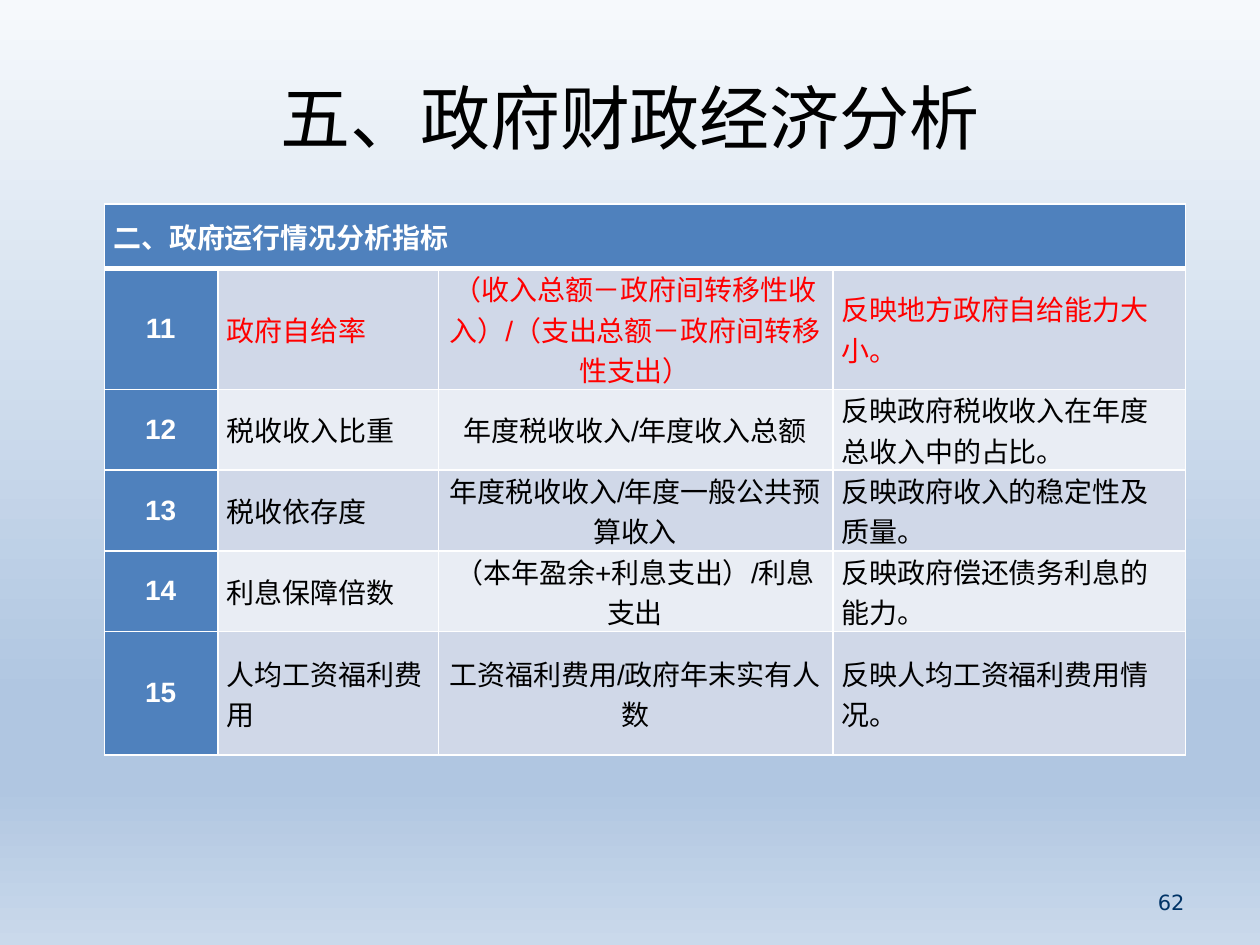
from lxml.etree import SubElement
from pptx import Presentation
from pptx.dml.color import RGBColor
from pptx.enum.text import MSO_ANCHOR, PP_ALIGN
from pptx.oxml import parse_xml
from pptx.oxml.ns import nsdecls, qn
from pptx.util import Inches, Pt

WIDTH, HEIGHT = 10, 7.5
COLORS = {
    "white": "FFFFFF", "black": "000000", "highlight": "FF0000",
    "header": "4F81BD", "odd_row": "D0D8E8", "even_row": "E9EDF4",
    "page_number": "003366",
}
BACKGROUND_STOPS = [(0, "F6F9FC"), (74, "B0C6E1"), (83, "B0C6E1"), (100, "CAD9EB")]
COLUMN_WIDTHS = [0.9, 1.75, 3.13, 2.8]
COLUMN_ALIGNMENTS = [PP_ALIGN.CENTER, PP_ALIGN.LEFT, PP_ALIGN.CENTER, PP_ALIGN.LEFT]
ROW_HEIGHTS = [0.51, 0.81, 0.54, 0.56, 0.54, 0.98]
TABLE_HEADING = "二、政府运行情况分析指标"
FIRST_NUMBER = 11
INDICATORS = [
    ("政府自给率", "（收入总额－政府间转移性收入）/（支出总额－政府间转移性支出）", "反映地方政府自给能力大小。"),
    ("税收收入比重", "年度税收收入/年度收入总额", "反映政府税收收入在年度总收入中的占比。"),
    ("税收依存度", "年度税收收入/年度一般公共预算收入", "反映政府收入的稳定性及质量。"),
    ("利息保障倍数", "（本年盈余+利息支出）/利息支出", "反映政府偿还债务利息的能力。"),
    ("人均工资福利费用", "工资福利费用/政府年末实有人数", "反映人均工资福利费用情况。"),
]


def rgb(name):
    return RGBColor.from_string(COLORS[name])


def set_background(slide):
    fill = slide.background.fill
    fill.gradient()
    fill.gradient_angle = 270
    stops = next(slide.element.iter(qn("a:gsLst")))
    for stop in list(stops):
        stops.remove(stop)
    for percent, color in BACKGROUND_STOPS:
        stop = SubElement(stops, qn("a:gs"), pos=str(percent * 1000))
        SubElement(stop, qn("a:srgbClr"), val=color)


def style_paragraph(paragraph, font_name, size, color, alignment, bold=False):
    paragraph.alignment = alignment
    paragraph.font.name = font_name
    paragraph.font.size = Pt(size)
    paragraph.font.bold = bold
    paragraph.font.color.rgb = rgb(color)


def add_text(slide, text, left, top, width, height, **style):
    shape = slide.shapes.add_textbox(
        Inches(left * WIDTH), Inches(top * HEIGHT),
        Inches(width * WIDTH), Inches(height * HEIGHT))
    frame = shape.text_frame
    frame.word_wrap = True
    frame.vertical_anchor = MSO_ANCHOR.MIDDLE
    frame.text = text
    style_paragraph(frame.paragraphs[0], **style)


def set_borders(cell, bottom_width):
    properties = cell._tc.get_or_add_tcPr()
    widths = {"lnL": 1, "lnR": 1, "lnT": 1, "lnB": bottom_width}
    for position, (tag, width) in enumerate(widths.items()):
        properties.insert(position, parse_xml(
            f'<a:{tag} {nsdecls("a")} w="{Pt(width)}"><a:solidFill>'
            f'<a:srgbClr val="{COLORS["white"]}"/></a:solidFill></a:{tag}>'))


def style_cell(cell, fill, bottom_width=1):
    cell.fill.solid()
    cell.fill.fore_color.rgb = rgb(fill)
    cell.vertical_anchor = MSO_ANCHOR.MIDDLE
    cell.margin_left = Inches(0.07)
    cell.margin_right = Inches(0.08)
    cell.margin_top = cell.margin_bottom = 0
    set_borders(cell, bottom_width)


def fill_cell(cell, text, color, alignment, bold=False):
    cell.text = text
    style_paragraph(cell.text_frame.paragraphs[0], "Arial", 16, color, alignment, bold)


def add_indicator_table(slide):
    table = slide.shapes.add_table(
        len(ROW_HEIGHTS), len(COLUMN_WIDTHS), Inches(0.83), Inches(1.62),
        Inches(sum(COLUMN_WIDTHS)), Inches(sum(ROW_HEIGHTS))).table
    for column, width in zip(table.columns, COLUMN_WIDTHS):
        column.width = Inches(width)
    for row, height in zip(table.rows, ROW_HEIGHTS):
        row.height = Inches(height)

    for cell in table.rows[0].cells:
        style_cell(cell, "header", bottom_width=3)
    heading = table.cell(0, 0)
    heading.merge(table.cell(0, len(COLUMN_WIDTHS) - 1))
    fill_cell(heading, TABLE_HEADING, "white", PP_ALIGN.LEFT, bold=True)

    for row_index, indicator in enumerate(INDICATORS, start=1):
        band = "odd_row" if row_index % 2 else "even_row"
        text_color = "highlight" if row_index == 1 else "black"
        values = (str(FIRST_NUMBER + row_index - 1), *indicator)
        for column_index, value in enumerate(values):
            cell = table.cell(row_index, column_index)
            is_number = column_index == 0
            style_cell(cell, "header" if is_number else band)
            fill_cell(cell, value, "white" if is_number else text_color,
                      COLUMN_ALIGNMENTS[column_index], is_number)


def main():
    presentation = Presentation()
    presentation.slide_width = Inches(WIDTH)
    presentation.slide_height = Inches(HEIGHT)
    slide = presentation.slides.add_slide(presentation.slide_layouts[6])
    set_background(slide)
    add_indicator_table(slide)
    add_text(slide, "五、政府财政经济分析", 0.05, 0.04, 0.9, 1 / 6,
             font_name="Calibri", size=40, color="black", alignment=PP_ALIGN.CENTER)
    add_text(slide, "62", 0.72, 0.93, 0.23, 0.05,
             font_name="DejaVu Sans", size=12, color="page_number", alignment=PP_ALIGN.RIGHT)
    presentation.save("out.pptx")


if __name__ == "__main__":
    main()
